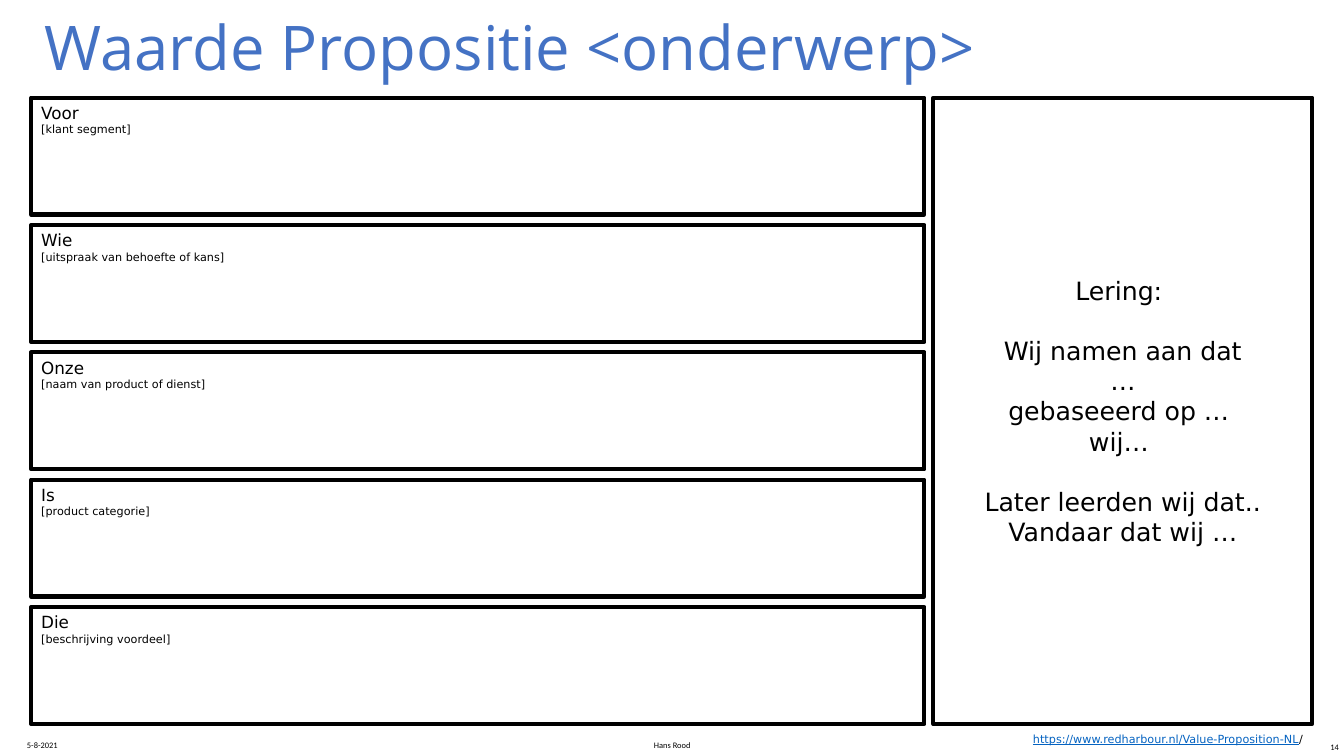
from dataclasses import dataclass

from pptx import Presentation
from pptx.dml.color import RGBColor
from pptx.enum.shapes import MSO_SHAPE as Preset
from pptx.enum.text import MSO_ANCHOR as Anchor, PP_ALIGN as Align
from pptx.util import Pt


@dataclass(frozen=True)
class Theme:
    """Colours, fonts and type sizes of the slide."""
    black: RGBColor = RGBColor(0x00, 0x00, 0x00)
    white: RGBColor = RGBColor(0xFF, 0xFF, 0xFF)
    title_blue: RGBColor = RGBColor(0x44, 0x72, 0xC4)
    link_blue: RGBColor = RGBColor(0x05, 0x63, 0xC1)
    title_font: str = "Open Sans"
    body_font: str = "DejaVu Sans"
    footer_font: str = "Calibri"
    title_size: int = 44
    lesson_size: int = 18
    heading_size: int = 12
    hint_size: int = 8
    footer_size: int = 6
    border: int = 3


THEME = Theme()
LEFT, TOP = 22.3, 69.8
ROW_WIDTH, ROW_HEIGHT, ROW_PITCH = 638, 83.5, 90.95
LESSON_LEFT, LESSON_WIDTH = 666.7, 270.7
PARTS = [
    ("Voor", "[klant segment]"),
    ("Wie", "[uitspraak van behoefte of kans]"),
    ("Onze", "[naam van product of dienst]"),
    ("Is", "[product categorie]"),
    ("Die", "[beschrijving voordeel]"),
]
LESSON_GROUPS = [
    ["Lering: "],
    ["Wij namen aan dat", "…", "gebaseeerd op … ", "wij… "],
    ["Later leerden wij dat..", "Vandaar dat wij …"],
]
FOOTERS = [
    ("5-8-2021", (12.2, 524.9, 216, 13), Align.LEFT),
    ("14", (747.4, 526.3, 216, 18), Align.RIGHT),
    ("Hans Rood", (318.2, 524.9, 324, 18), Align.CENTER),
]


def set_frame(frame, anchor=Anchor.TOP, sides=7.2, ends=3.6):
    """Set wrapping, anchor and insets of a text frame."""
    layout = {
        "word_wrap": True, "vertical_anchor": anchor,
        "margin_left": Pt(sides), "margin_right": Pt(sides),
        "margin_top": Pt(ends), "margin_bottom": Pt(ends),
    }
    for attribute, value in layout.items():
        setattr(frame, attribute, value)
    return frame


def add_run(paragraph, text, size, font=THEME.body_font, color=THEME.black, underline=False):
    """Append formatted text to a paragraph."""
    run = paragraph.add_run()
    run.text = text
    looks = {"size": Pt(size), "name": font, "underline": underline}
    for attribute, value in looks.items():
        setattr(run.font, attribute, value)
    run.font.color.rgb = color


def add_paragraph(frame, index, align=Align.LEFT):
    """Return the first paragraph of a frame, or a new one after it."""
    paragraph = frame.add_paragraph() if index else frame.paragraphs[0]
    paragraph.alignment = align
    return paragraph


def add_label(slide, box, **layout):
    """Add a text box and return its frame."""
    label = slide.shapes.add_textbox(*map(Pt, box))
    return set_frame(label.text_frame, **layout)


def add_panel(slide, box, **layout):
    """Add a white panel with a black border and return its frame."""
    panel = slide.shapes.add_shape(Preset.RECTANGLE, *map(Pt, box))
    panel.shadow.inherit = False
    panel.fill.solid()
    panel.fill.fore_color.rgb = THEME.white
    panel.line.color.rgb = THEME.black
    panel.line.width = Pt(THEME.border)
    return set_frame(panel.text_frame, **layout)


def add_title(slide):
    """Add the slide heading."""
    frame = add_label(slide, (LEFT, 5.8, 816.5, 60.5), anchor=Anchor.MIDDLE, sides=9.4, ends=9.4)
    heading = add_paragraph(frame, 0)
    heading.line_spacing = 0.9
    add_run(heading, "Waarde Propositie <onderwerp>", THEME.title_size,
            THEME.title_font, THEME.title_blue)


def add_parts(slide):
    """Add the stacked panels of the value proposition."""
    for row, lines in enumerate(PARTS):
        frame = add_panel(slide, (LEFT, TOP + row * ROW_PITCH, ROW_WIDTH, ROW_HEIGHT))
        for index, (text, size) in enumerate(zip(lines, (THEME.heading_size, THEME.hint_size))):
            add_run(add_paragraph(frame, index), text, size)


def add_lesson(slide):
    """Add the tall panel with the lesson learned."""
    height = (len(PARTS) - 1) * ROW_PITCH + ROW_HEIGHT
    frame = add_panel(slide, (LESSON_LEFT, TOP, LESSON_WIDTH, height),
                      anchor=Anchor.MIDDLE, sides=0)
    for group_index, group in enumerate(LESSON_GROUPS):
        for line_index, text in enumerate(group):
            paragraph = add_paragraph(frame, group_index + line_index, Align.CENTER)
            if group_index and not line_index:
                paragraph.space_before = Pt(21.5)
            add_run(paragraph, text, THEME.lesson_size)


def add_footers(slide):
    """Add date, page number, author and source address."""
    for text, box, align in FOOTERS:
        paragraph = add_paragraph(add_label(slide, box), 0, align)
        add_run(paragraph, text, THEME.footer_size, THEME.footer_font)
    address = add_paragraph(add_label(slide, (730.8, 519.8, 229.2, 17)), 0)
    add_run(address, "https://www.redharbour.nl/Value-Proposition-NL", THEME.hint_size,
            color=THEME.link_blue, underline=True)
    add_run(address, "/", THEME.hint_size)


def main():
    """Build and save the value proposition slide."""
    deck = Presentation()
    deck.slide_width, deck.slide_height = Pt(960), Pt(540)
    slide = deck.slides.add_slide(deck.slide_layouts[6])
    add_title(slide)
    add_parts(slide)
    add_lesson(slide)
    add_footers(slide)
    deck.save("out.pptx")


if __name__ == "__main__":
    main()
